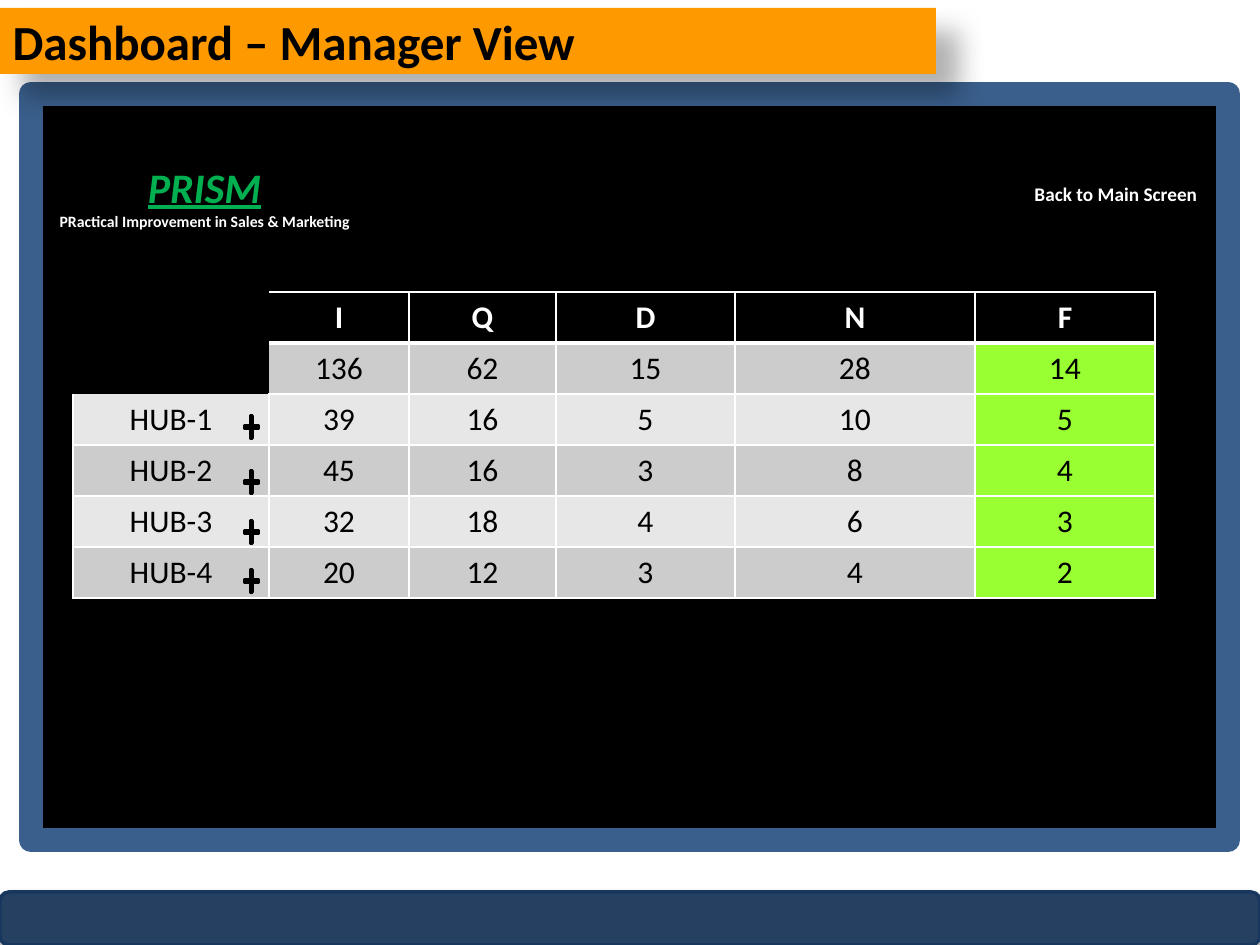
import pptx
import pptx.util
import pptx.dml.color
import pptx.enum.shapes
import pptx.enum.text
import pptx.oxml
import pptx.oxml.ns

SCALE = 914400 / 126
KIND = pptx.enum.shapes.MSO_SHAPE
ALIGN = pptx.enum.text.PP_ALIGN
MID = pptx.enum.text.MSO_ANCHOR.MIDDLE
NS = pptx.oxml.ns.nsdecls("a")
PLAIN = "{2D5ABB26-0587-4C30-8999-92F81FD0307C}"
HEADS = ["I", "Q", "D", "N", "F"]
ROWS = [
    ["", 136, 62, 15, 28, 14],
    ["HUB-1", 39, 16, 5, 10, 5],
    ["HUB-2", 45, 16, 3, 8, 4],
    ["HUB-3", 32, 18, 4, 6, 3],
    ["HUB-4", 20, 12, 3, 4, 2],
]
WIDTHS = [196, 140, 147, 179, 240, 180]


def px(num):
    return round(num * SCALE)


def tint(code):
    return pptx.dml.color.RGBColor.from_string(code)


def apply(item, form):
    for key, val in form.items():
        setattr(item, key, val)


def place(item, box):
    apply(item, dict(zip(("left", "top", "width", "height"), map(px, box))))


def paint(item, fill, line=None, wide=0):
    item.fill.solid()
    item.fill.fore_color.rgb = tint(fill)
    if line:
        item.line.color.rgb = tint(line)
        item.line.width = pptx.util.Pt(wide)
    else:
        item.line.fill.background()


def shade(item, alpha, blur, dist, angle):
    item.shadow.inherit = False
    effect = item._element.spPr.find(pptx.oxml.ns.qn("a:effectLst"))
    effect.append(pptx.oxml.parse_xml(
        f'<a:outerShdw {NS} blurRad="{int(blur * 12700)}" dist="{int(dist * 12700)}" '
        f'dir="{angle * 60000}" algn="tl" rotWithShape="0"><a:srgbClr val="000000">'
        f'<a:alpha val="{alpha * 1000}"/></a:srgbClr></a:outerShdw>'))


def shape(slide, kind, box, fill, line=None, wide=0):
    item = slide.shapes.add_shape(kind, *map(px, box))
    item.shadow.inherit = False
    paint(item, fill, line, wide)
    return item


def write(para, text, size, code, align=ALIGN.CENTER, **form):
    para.alignment = align
    run = para.add_run()
    run.text = text
    apply(run.font, {"name": "Calibri", "size": pptx.util.Pt(size), **form})
    run.font.color.rgb = tint(code)


def label(slide, box, lines, **form):
    frame = slide.shapes.add_textbox(*map(px, box)).text_frame
    apply(frame, {"word_wrap": True, **form})
    for num, (text, style) in enumerate(lines):
        para = frame.add_paragraph() if num else frame.paragraphs[0]
        write(para, text, bold=True, **style)


def title(slide, box):
    item = slide.shapes.title
    place(item, box)
    item._element.spPr.append(pptx.oxml.parse_xml(
        f'<a:prstGeom {NS} prst="round2DiagRect"><a:avLst>'
        '<a:gd name="adj1" fmla="val 50000"/><a:gd name="adj2" fmla="val 0"/>'
        '</a:avLst></a:prstGeom>'))
    paint(item, "FF9900")
    shade(item, 30, 15, 18, 45)
    frame = item.text_frame
    apply(frame, {"vertical_anchor": MID, "word_wrap": True,
                  "auto_size": pptx.enum.text.MSO_AUTO_SIZE.NONE})
    write(frame.paragraphs[0], "Dashboard – Manager View", 28, "000000",
          ALIGN.LEFT, bold=True)
    slide.shapes._spTree.append(item._element)


def edge(cell, sides):
    props = cell._tc.get_or_add_tcPr()
    for num, (side, wide) in enumerate(sides.items()):
        props.insert(num, pptx.oxml.parse_xml(
            f'<a:ln{side} {NS} w="{wide * 12700}"><a:solidFill>'
            f'<a:srgbClr val="FFFFFF"/></a:solidFill></a:ln{side}>'))


def grid(slide, box):
    data = [[""] + HEADS] + ROWS
    table = slide.shapes.add_table(len(data), len(WIDTHS), *map(px, box)).table
    table._tbl.tblPr.find(pptx.oxml.ns.qn("a:tableStyleId")).text = PLAIN
    apply(table, {"first_row": False, "horz_banding": False})
    for col, wide in zip(table.columns, WIDTHS):
        col.width = px(wide)
    for row, vals in enumerate(data):
        table.rows[row].height = px(box[3] / len(data))
        for col, val in enumerate(vals):
            cell = table.cell(row, col)
            if val == "":
                cell.fill.background()
                continue
            head = row == 0
            band = "CCCCCC" if row % 2 else "E7E7E7"
            fill = "000000" if head else "99FF33" if col == 5 else band
            cell.fill.solid()
            cell.fill.fore_color.rgb = tint(fill)
            cell.vertical_anchor = MID
            write(cell.text_frame.paragraphs[0], str(val), 18,
                  "FFFFFF" if head else "000000", bold=head)
            sides = {"L": 1, "R": 1, "T": 3 if row == 1 else 1, "B": 3 if head else 1}
            if col == 1 and row < 2:
                del sides["L"]
            if col == 0 and row == 2:
                del sides["T"]
            edge(cell, sides)


def marks(slide, box):
    left, top, wide, high = box
    for down in (0, 55, 105, 154):
        item = shape(slide, KIND.MATH_PLUS, (left, top + down, wide, high),
                     "000000", "000000", 2)
        item.adjustments[0] = 0.09


def screen(slide, box):
    left, top, wide, high = box
    shape(slide, KIND.RECTANGLE, box, "000000", "3A5F8C", 14)
    title(slide, (0, 8, 936, 66))
    label(slide, (left - 21, top + 61, 389, 84), [
        ("PRISM", {"size": 24, "code": "00B050", "italic": True, "underline": True}),
        ("PRactical Improvement in Sales & Marketing", {"size": 9, "code": "FFFFFF"}),
    ])
    label(slide, (left + wide - 233, top + 71, 242, 58),
          [("Back to Main Screen", {"size": 11, "code": "FFFFFF"})], vertical_anchor=MID)
    grid(slide, (left + 42, top + 198, sum(WIDTHS), 306))
    marks(slide, (left + 211, top + 318, 19, 30))


def footer(slide, box):
    item = shape(slide, KIND.ROUNDED_RECTANGLE, box, "254061", "17375E", 2)
    shade(item, 32, 3.5, 2.2, 90)


def main():
    deck = pptx.Presentation()
    apply(deck, {"slide_width": px(1260), "slide_height": px(945)})
    slide = deck.slides.add_slide(deck.slide_layouts[5])
    footer(slide, (0, 892, 1260, 53))
    screen(slide, (31, 94, 1197, 746))
    deck.save("out.pptx")


if __name__ == "__main__":
    main()
